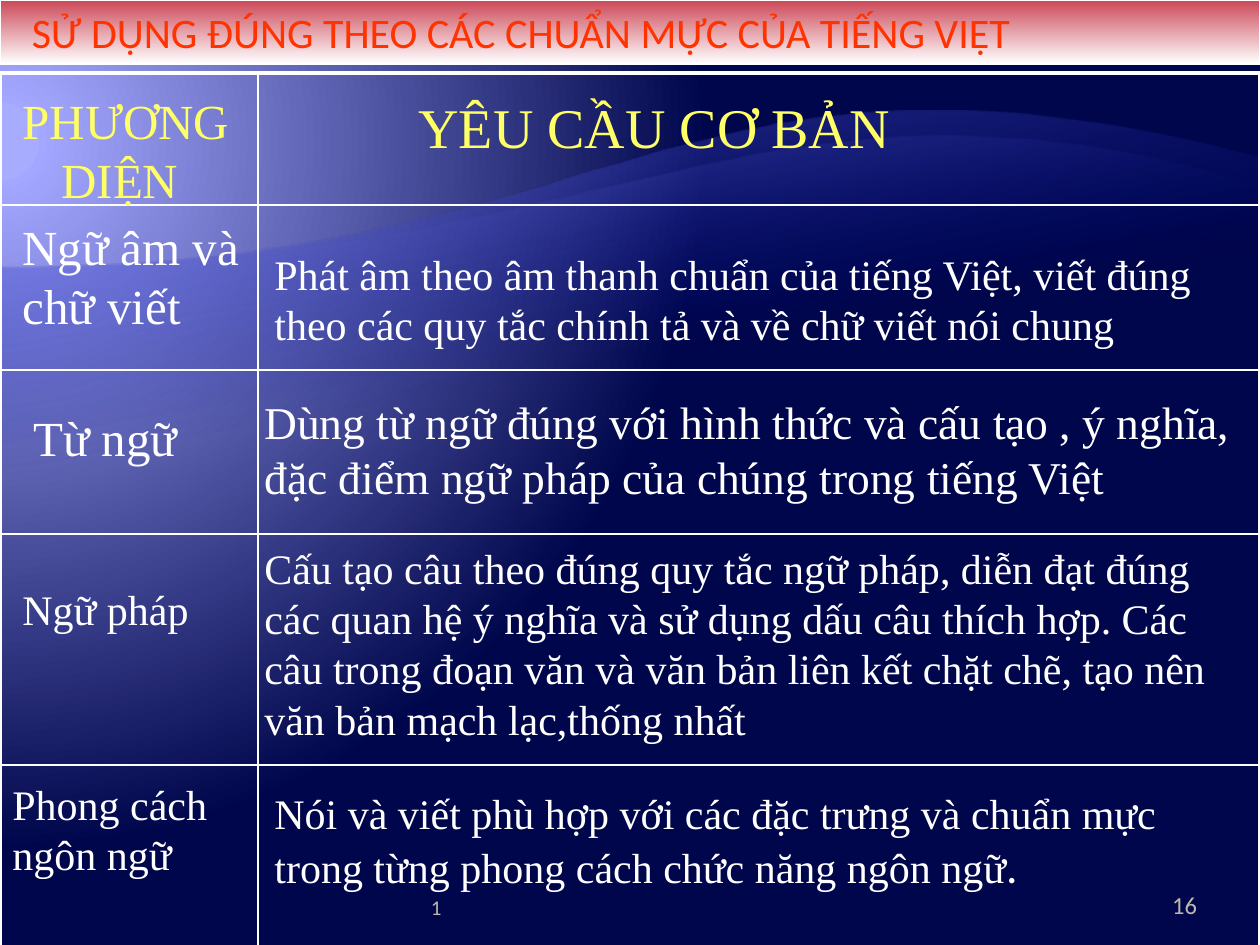
from lxml.etree import SubElement
from pptx import Presentation
from pptx.dml.color import RGBColor
from pptx.enum.shapes import MSO_SHAPE
from pptx.enum.text import MSO_ANCHOR as Anchor, MSO_AUTO_SIZE as AutoSize, PP_ALIGN as Align
from pptx.oxml.ns import qn
from pptx.util import Pt

PX = 914400 / 126
WIDTH, HEIGHT = 1260, 945

WHITE = RGBColor(0xFF, 0xFF, 0xFF)
YELLOW = RGBColor(0xFF, 0xFF, 0x66)
ORANGE = RGBColor(0xFF, 0x33, 0x00)
GREY = RGBColor(0xBD, 0xB8, 0xA9)
RED = RGBColor(0xCC, 0x47, 0x57)
PALE = RGBColor(0xA8, 0xAC, 0xFF)
LILAC = RGBColor(0xA3, 0xA7, 0xFF)
NAVY = RGBColor(0x00, 0x06, 0x4B)
BLUE = RGBColor(0x00, 0x0D, 0x9E)
VIOLET = RGBColor(0x79, 0x7F, 0xFF)

SERIF, SANS = "Times New Roman", "Calibri"
HEADINGS = [  # text, box, size
    ("PHƯƠNG DIỆN ", (0, 11, 252, 131), 28),
    ("YÊU CẦU CƠ BẢN ", (378, 13, 567, 81), 32),
]
REQUIREMENTS = [  # aspect, its box and size, requirement, its box and size
    ("Ngữ âm và chữ viết", (10, 137, 273, 131), 28,
     "Phát âm theo âm thanh chuẩn của tiếng Việt, viết đúng theo các quy tắc "
     "chính tả và về chữ viết nói chung", (262, 169, 998, 115), 24),
    ("Từ ngữ", (21, 328, 231, 72), 28,
     "Dùng từ ngữ đúng với hình thức và cấu tạo , ý nghĩa, đặc điểm ngữ pháp "
     "của chúng trong tiếng Việt", (252, 315, 1008, 123), 26),
    ("Ngữ pháp", (10, 504, 262, 63), 24,
     "Cấu tạo câu theo đúng quy tắc ngữ pháp, diễn đạt đúng các quan hệ ý nghĩa "
     "và sử dụng dấu câu thích hợp. Các câu trong đoạn văn và văn bản liên kết "
     "chặt chẽ, tạo nên văn bản mạch lạc,thống nhất", (252, 463, 1008, 217), 24),
    ("Phong cách ngôn ngữ", (0, 699, 273, 115), 24,
     "Nói và viết phù hợp với các đặc trưng và chuẩn mực trong từng phong cách "
     "chức năng ngôn ngữ", (262, 708, 998, 122), 24),
]
COLUMNS = [258, 1002]
ROWS = [132, 165, 164, 231, 189]


def px(*lengths):
    return [round(length * PX) for length in lengths]


def set_gradient(fill, owner, stops, angle=None, focus=None):
    """Stops are (position %, colour, opacity %); focus gives a circular gradient."""
    fill.gradient()
    gradient = owner.find(".//" + qn("a:gradFill"))
    for child in list(gradient):
        gradient.remove(child)
    stop_list = SubElement(gradient, qn("a:gsLst"))
    for position, colour, opacity in stops:
        stop = SubElement(stop_list, qn("a:gs"), pos=str(position * 1000))
        tint = SubElement(stop, qn("a:srgbClr"), val=str(colour))
        if opacity < 100:
            SubElement(tint, qn("a:alpha"), val=str(opacity * 1000))
    if focus:
        path = SubElement(gradient, qn("a:path"), path="circle")
        sides = {side: str(value * 1000) for side, value in zip("ltrb", focus)}
        SubElement(path, qn("a:fillToRect"), **sides)
    else:
        SubElement(gradient, qn("a:lin"), ang=str(angle * 60000), scaled="0")


def add_wave(slide, curve, bottom, colour, opacity):
    steps = 60
    points = []
    for step in range(steps + 1):
        t = step / steps
        weights = ((1 - t) ** 3, 3 * t * (1 - t) ** 2, 3 * t * t * (1 - t), t ** 3)
        points.append([sum(w * p[axis] for w, p in zip(weights, curve)) for axis in (0, 1)])
    builder = slide.shapes.build_freeform(*points[0], scale=PX)
    builder.add_line_segments(points[1:] + [(WIDTH, bottom), (0, bottom)], close=True)
    wave = builder.convert_to_shape()
    wave.shadow.inherit = False
    wave.line.fill.background()
    set_gradient(wave.fill, wave.element.spPr, [(65, BLUE, 0), (100, colour, opacity)], 260)


def add_background(slide):
    set_gradient(slide.background.fill, slide.element,
                 [(5, PALE, 100), (5, LILAC, 100), (90, NAVY, 100)], focus=(20, 30, 135, 100))
    add_wave(slide, [(0, 268), (630, 268), (673, 6), (1260, 158)], 924, VIOLET, 55)
    add_wave(slide, [(0, 268), (630, 268), (753, 39), (1260, 185)], 803, LILAC, 30)


def style_paragraph(paragraph, text, size, colour, font, align=Align.LEFT):
    paragraph.text = text
    paragraph.alignment = align
    paragraph.font.size = Pt(size)
    paragraph.font.name = font
    paragraph.font.color.rgb = colour


def add_text(slide, box, text, size, colour=WHITE, font=SERIF, align=Align.LEFT):
    frame = slide.shapes.add_textbox(*px(*box)).text_frame
    frame.word_wrap = True
    style_paragraph(frame.paragraphs[0], text, size, colour, font, align)
    return frame


def add_title(slide, box):
    banner = slide.shapes.add_shape(MSO_SHAPE.RECTANGLE, *px(*box))
    banner.shadow.inherit = False
    set_gradient(banner.fill, banner.element.spPr, [(0, RED, 100), (100, WHITE, 100)], 90)
    banner.line.color.rgb = WHITE
    banner.line.width = Pt(1)
    frame = banner.text_frame
    frame.vertical_anchor = Anchor.TOP
    frame.margin_left, = px(32)
    style_paragraph(frame.paragraphs[0], "SỬ DỤNG ĐÚNG THEO CÁC CHUẨN MỰC CỦA TIẾNG VIỆT",
                    24, ORANGE, SANS)


def add_grid(slide, box):
    grid = slide.shapes.add_table(len(ROWS), len(COLUMNS), *px(*box)).table
    grid.first_row = grid.horz_banding = False
    for column, width in zip(grid.columns, px(*COLUMNS)):
        column.width = width
    for row, height in zip(grid.rows, px(*ROWS)):
        row.height = height
    for r in range(len(ROWS)):
        for c in range(len(COLUMNS)):
            cell = grid.cell(r, c)
            outer = {"lnL": c == 0, "lnR": c == len(COLUMNS) - 1,
                     "lnT": r == 0, "lnB": r == len(ROWS) - 1}
            properties = cell._tc.get_or_add_tcPr()
            for side, is_outer in outer.items():
                border = SubElement(properties, qn("a:" + side),
                                    w=str(Pt(2.25 if is_outer else 1)))
                solid = SubElement(border, qn("a:solidFill"))
                SubElement(solid, qn("a:srgbClr"), val=str(WHITE))
            cell.fill.background()


def add_requirements(slide, box):
    left, top = box[:2]
    add_grid(slide, box)

    def place(part):
        return left + part[0], top + part[1], part[2], part[3]

    for heading, part, size in HEADINGS:
        frame = add_text(slide, place(part), heading, size, YELLOW, align=Align.CENTER)
        frame.auto_size = AutoSize.SHAPE_TO_FIT_TEXT
    for aspect, aspect_box, aspect_size, rule, rule_box, rule_size in REQUIREMENTS:
        for text, part, size in ((aspect, aspect_box, aspect_size), (rule, rule_box, rule_size)):
            frame = add_text(slide, place(part), text, size)
            frame.auto_size = AutoSize.SHAPE_TO_FIT_TEXT
    # The closing full stop is larger and in the sans font
    full_stop = frame.paragraphs[0].add_run()
    full_stop.text = "."
    full_stop.font.size = Pt(26)
    full_stop.font.name = SANS


def add_footer(slide, box):
    left, top, width, height = box
    footer = add_text(slide, (left, top, 399, height), "1", 12, GREY, SANS)
    footer.margin_left = 0
    number = add_text(slide, (left + width - 294, top, 294, height), "16", 14, GREY, SANS,
                      Align.RIGHT)
    number.margin_right = 0
    footer.vertical_anchor = number.vertical_anchor = Anchor.BOTTOM


def main():
    deck = Presentation()
    deck.slide_width, deck.slide_height = px(WIDTH, HEIGHT)
    slide = deck.slides.add_slide(deck.slide_layouts[6])
    add_background(slide)
    add_requirements(slide, (0, 73, WIDTH, sum(ROWS)))
    add_footer(slide, (431, 876, 766, 50))
    add_title(slide, (0, 0, WIDTH, 64))
    deck.save("out.pptx")


if __name__ == "__main__":
    main()
